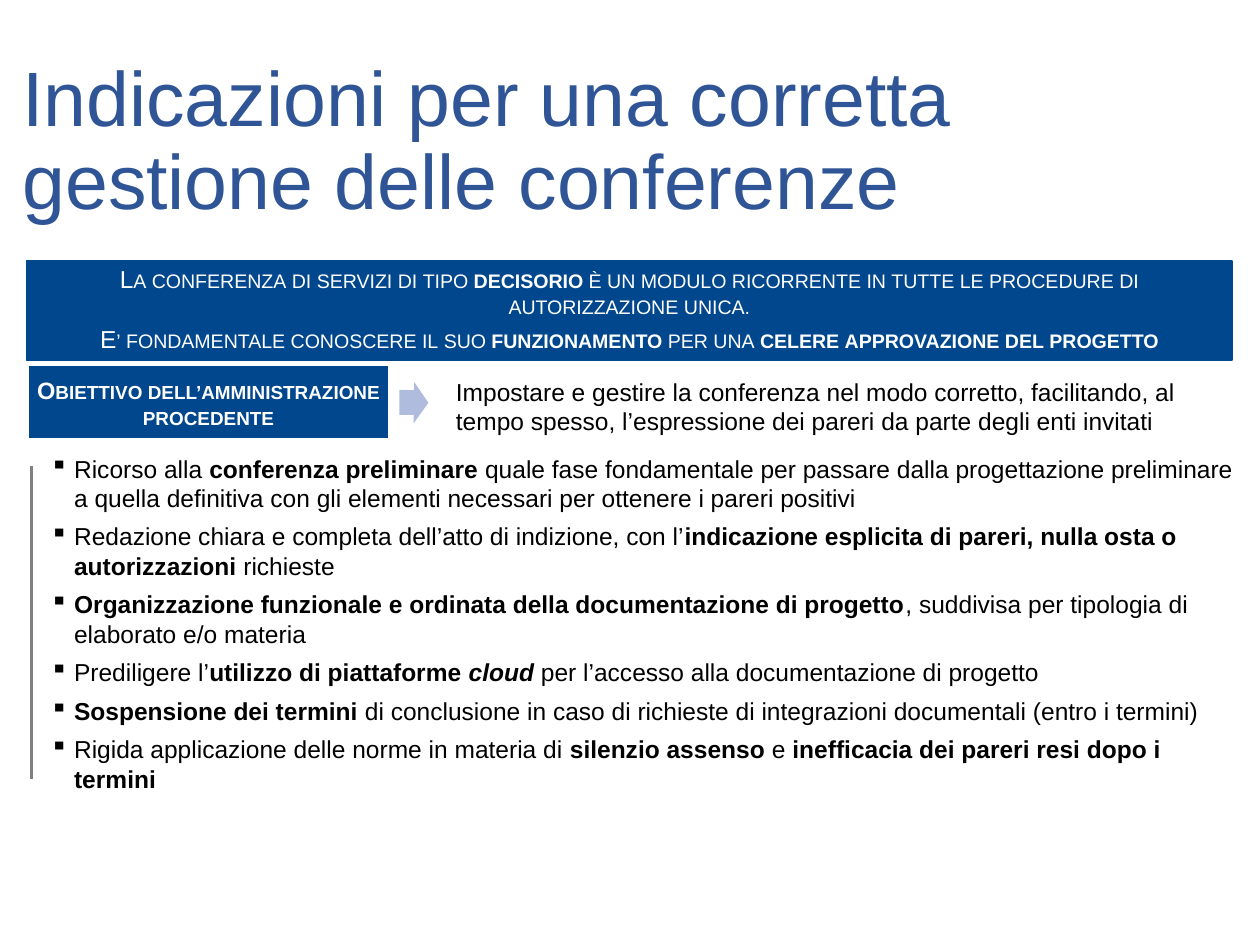
import pptx
import pptx.util
import pptx.dml.color
import pptx.enum.shapes
import pptx.enum.text
import pptx.oxml.ns
from dataclasses import dataclass
from lxml import etree
from pptx.util import Inches

SHAPE = pptx.enum.shapes.MSO_SHAPE
ALIGN = pptx.enum.text.PP_ALIGN
ANCHOR = pptx.enum.text.MSO_ANCHOR


@dataclass(frozen=True)
class Theme:
    font: str = "Arial"
    title_size: float = 44
    body_size: float = 14
    label_size: float = 13.5
    title: str = "2F5597"
    text: str = "000000"
    panel: str = "01478D"
    light: str = "FFFFFF"
    arrow: str = "B0BCDE"
    rule: str = "808080"


THEME = Theme()

TITLE = "Indicazioni per una corretta gestione delle conferenze"
INTRO = [
    [("La conferenza di servizi di tipo ", ""), ("decisorio", "b"),
     (" è un modulo ricorrente in tutte le procedure di autorizzazione unica.", "")],
    [("E’ fondamentale conoscere il suo ", ""), ("funzionamento", "b"),
     (" per una ", ""), ("celere approvazione del progetto", "b")],
]
GOAL_LABEL = "Obiettivo dell’amministrazione procedente"
GOAL = ("Impostare e gestire la conferenza nel modo corretto, facilitando, al tempo spesso, "
        "l’espressione dei pareri da parte degli enti invitati")
GUIDELINES = [
    [("Ricorso alla ", ""), ("conferenza preliminare ", "b"),
     ("quale fase fondamentale per passare dalla progettazione preliminare a quella "
      "definitiva con gli elementi necessari per ottenere i pareri positivi", "")],
    [("Redazione chiara e completa dell’atto di indizione, con l’", ""),
     ("indicazione esplicita di pareri, nulla osta o autorizzazioni ", "b"), ("richieste", "")],
    [("Organizzazione funzionale e ordinata della documentazione di progetto", "b"),
     (", suddivisa per tipologia di elaborato e/o materia", "")],
    [("Prediligere l’", ""), ("utilizzo di piattaforme ", "b"), ("cloud ", "bi"),
     ("per l’accesso alla documentazione di progetto", "")],
    [("Sospensione dei termini ", "b"),
     ("di conclusione in caso di richieste di integrazioni documentali (entro i termini)", "")],
    [("Rigida applicazione delle norme in materia di ", ""), ("silenzio assenso ", "b"),
     ("e ", ""), ("inefficacia dei pareri resi dopo i termini", "b")],
]


def rgb(value):
    return pptx.dml.color.RGBColor.from_string(value)


def add_bullet(paragraph):
    properties = paragraph._p.get_or_add_pPr()
    properties.set("marL", str(Inches(0.19)))
    properties.set("indent", str(-Inches(0.19)))
    bullet = etree.SubElement(properties, pptx.oxml.ns.qn("a:buChar"))
    bullet.set("char", "▪")


def write(frame, paragraphs, size, color, align=ALIGN.LEFT, spacing=None,
          before=0, after=0, bulleted=False, small_caps=False):
    frame.word_wrap = True
    for index, parts in enumerate(paragraphs):
        paragraph = frame.add_paragraph() if index else frame.paragraphs[0]
        if bulleted:
            add_bullet(paragraph)
        paragraph.alignment = align
        paragraph.line_spacing = spacing
        paragraph.space_before = pptx.util.Pt(before if index else 0)
        paragraph.space_after = pptx.util.Pt(after)
        paragraph.font.name = THEME.font
        paragraph.font.size = pptx.util.Pt(size)
        paragraph.font.color.rgb = rgb(color)
        for text, style in parts:
            run = paragraph.add_run()
            run.text = text
            if "b" in style:
                run.font.bold = True
            if "i" in style:
                run.font.italic = True
            if small_caps:
                run._r.get_or_add_rPr().set("cap", "small")


def add_text(slide, box, paragraphs, size, color, anchor=ANCHOR.TOP, **layout):
    frame = slide.shapes.add_textbox(*map(Inches, box)).text_frame
    frame.vertical_anchor = anchor
    write(frame, paragraphs, size, color, **layout)


def add_block(slide, kind, box, fill, line=None):
    block = slide.shapes.add_shape(kind, *map(Inches, box))
    block.shadow.inherit = False
    block.fill.solid()
    block.fill.fore_color.rgb = rgb(fill)
    if line:
        block.line.color.rgb = rgb(line)
        block.line.width = pptx.util.Pt(1)
    else:
        block.line.fill.background()
    return block


def add_panel(slide, box, line, paragraphs, size, bottom=0.05, after=0):
    frame = add_block(slide, SHAPE.RECTANGLE, box, THEME.panel, line).text_frame
    frame.vertical_anchor = ANCHOR.MIDDLE
    frame.margin_left = frame.margin_right = frame.margin_top = Inches(0.05)
    frame.margin_bottom = Inches(bottom)
    write(frame, paragraphs, size, THEME.light, align=ALIGN.CENTER,
          spacing=0.9, after=after, small_caps=True)


def add_arrow(slide, box):
    arrow = add_block(slide, SHAPE.RIGHT_ARROW, box, THEME.arrow)
    arrow.adjustments[0] = 0.6
    arrow.adjustments[1] = 0.5
    arrow.rotation = 0.5


def add_rule(slide, x, top, bottom):
    rule = slide.shapes.add_connector(
        pptx.enum.shapes.MSO_CONNECTOR.STRAIGHT, *map(Inches, (x, top, x, bottom)))
    rule.line.color.rgb = rgb(THEME.rule)
    rule.line.width = pptx.util.Pt(2.25)
    etree.SubElement(rule._element.spPr, pptx.oxml.ns.qn("a:effectLst"))


def main():
    deck = pptx.Presentation()
    deck.slide_width = Inches(10)
    deck.slide_height = Inches(7.5)
    slide = deck.slides.add_slide(deck.slide_layouts[6])

    add_text(slide, (0.08, 0.41, 8.62, 1.45), [[(TITLE, "")]], THEME.title_size,
             THEME.title, anchor=ANCHOR.MIDDLE, spacing=0.9)
    add_text(slide, (0.3, 3.55, 9.6, 2.81), GUIDELINES, THEME.body_size, THEME.text,
             before=2.2, after=3, bulleted=True)
    add_panel(slide, (0.21, 2.07, 9.57, 0.79), THEME.panel, INTRO, THEME.body_size, after=4.5)
    add_panel(slide, (0.22, 2.9, 2.87, 0.58), THEME.light, [[(GOAL_LABEL, "b")]],
              THEME.label_size, bottom=0)
    add_arrow(slide, (3.17, 3.03, 0.23, 0.33))
    add_text(slide, (3.52, 2.95, 6.26, 0.58), [[(GOAL, "")]], THEME.body_size, THEME.text,
             spacing=pptx.util.Pt(16.5), after=4.5)
    add_rule(slide, 0.25, 3.7, 6.18)

    deck.save("out.pptx")


if __name__ == "__main__":
    main()
